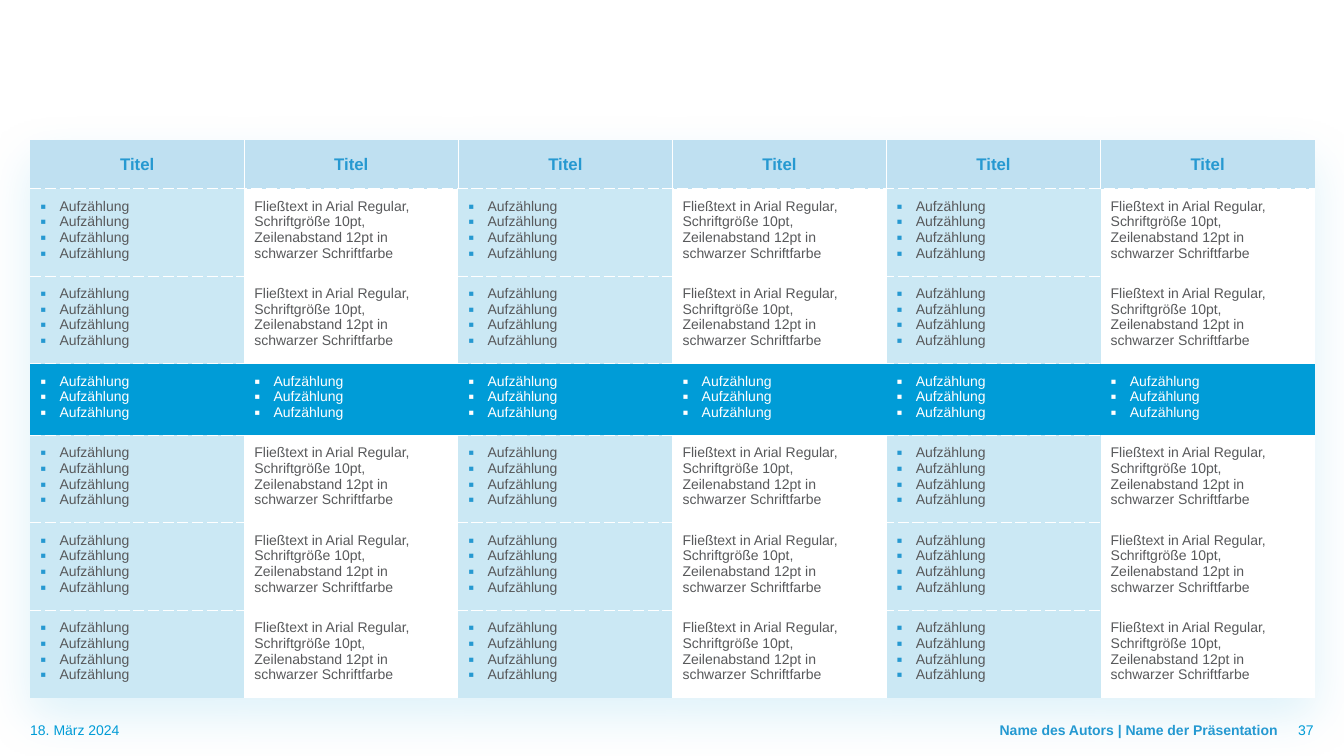
import lxml.etree
import pptx
import pptx.dml.color
import pptx.enum.text
import pptx.oxml
import pptx.oxml.ns
import pptx.util

Inches = pptx.util.Inches
Pt = pptx.util.Pt
RGBColor = pptx.dml.color.RGBColor
ALIGN = pptx.enum.text.PP_ALIGN
ANCHOR = pptx.enum.text.MSO_ANCHOR
qn = pptx.oxml.ns.qn

WHITE = RGBColor(0xFF, 0xFF, 0xFF)
CYAN = RGBColor(0x00, 0x9C, 0xD7)
BLUE = RGBColor(0x26, 0x99, 0xD1)
PALE = RGBColor(0xBF, 0xE0, 0xF1)
TINT = RGBColor(0xCB, 0xE8, 0xF4)
GREY = RGBColor(0x58, 0x59, 0x5B)

FONT = "Arial"
COLS, ROWS = 6, 7
HEAD, BAND = 0, 3
HEAD_H, BAND_H = 0.48, 0.71
ITEM = "Aufzählung"
PROSE = ("Fließtext in Arial Regular, Schriftgröße 10pt, "
         "Zeilenabstand 12pt in schwarzer Schriftfarbe")
NO_GRID = "{2D5ABB26-0587-4C30-8999-92F81FD0307C}"


def add_node(parent, tag, **attrs):
    node = lxml.etree.SubElement(parent, qn(tag))
    for key, value in attrs.items():
        node.set(key, str(value))
    return node


def style(para, size, color, bold=False):
    for run in para.runs:
        font = run.font
        font.name, font.size, font.bold = FONT, Pt(size), bold
        font.color.rgb = color


def add_bullet(para, color):
    props = para._p.get_or_add_pPr()
    props.set("marL", str(Inches(0.19)))
    props.set("indent", str(-Inches(0.19)))
    add_node(add_node(props, "a:buClr"), "a:srgbClr", val=color)
    add_node(props, "a:buSzPct", val=120000)
    add_node(props, "a:buFont", typeface=FONT)
    add_node(props, "a:buChar", char="▪")


def add_edge(cell, side, width, dash="solid"):
    """Draw one white border; a width of 0 hides it."""
    line = add_node(cell._tc.get_or_add_tcPr(), "a:ln" + side, w=Pt(width))
    if width:
        add_node(add_node(line, "a:solidFill"), "a:srgbClr", val=WHITE)
        add_node(line, "a:prstDash", val=dash)
    else:
        add_node(line, "a:noFill")


def add_edges(cell, row, col):
    """Solid lines between header cells, dashed lines between rows."""
    add_edge(cell, "L", 0.5 if row == HEAD and col > 0 else 0)
    add_edge(cell, "R", 0.5 if row == HEAD and col < COLS - 1 else 0)
    add_edge(cell, "T", 0.75 if row > HEAD else 0, "sysDash")
    add_edge(cell, "B", 0.75 if row < ROWS - 1 else 0, "sysDash")


def paint(cell, color, alpha=100):
    cell.fill.solid()
    cell.fill.fore_color.rgb = color
    if alpha < 100:
        tone = cell._tc.tcPr.find(".//" + qn("a:srgbClr"))
        add_node(tone, "a:alpha", val=alpha * 1000)


def fill_head(cell):
    paint(cell, PALE)
    cell.vertical_anchor = ANCHOR.MIDDLE
    para = cell.text_frame.paragraphs[0]
    para.text = "Titel"
    para.alignment = ALIGN.CENTER
    style(para, 12, BLUE, True)


def fill_list(cell, count, color, mark):
    cell.text_frame.text = "\n".join([ITEM] * count)
    for para in cell.text_frame.paragraphs:
        add_bullet(para, mark)
        style(para, 10, color)


def fill_cell(cell, row, col):
    cell.margin_left = cell.margin_right = Inches(0.1)
    cell.margin_top = cell.margin_bottom = Inches(0.1)
    add_edges(cell, row, col)
    if row == HEAD:
        fill_head(cell)
    elif row == BAND:
        paint(cell, CYAN)
        fill_list(cell, 3, WHITE, WHITE)
    elif col % 2 == 0:
        paint(cell, TINT, 50)
        fill_list(cell, 4, GREY, BLUE)
    else:
        paint(cell, WHITE)
        cell.text_frame.text = PROSE
        style(cell.text_frame.paragraphs[0], 10, GREY)


def add_glow(props):
    """Give the table a soft blue shadow below it."""
    effects = pptx.oxml.parse_xml(
        '<a:effectLst xmlns:a="http://schemas.openxmlformats.org/drawingml/2006/main"/>')
    glow = add_node(effects, "a:outerShdw", blurRad=Inches(0.5),
                    dist=Inches(0.2), dir=5400000, rotWithShape=0)
    add_node(add_node(glow, "a:srgbClr", val=CYAN), "a:alpha", val=12000)
    props.insert(0, effects)


def add_grid(slide, left, top, width, height):
    frame = slide.shapes.add_table(ROWS, COLS, Inches(left), Inches(top),
                                   Inches(width), Inches(height))
    table = frame.table
    table.first_row = table.horz_banding = False
    props = table._tbl.tblPr
    props.find(qn("a:tableStyleId")).text = NO_GRID
    add_glow(props)
    body = (height - HEAD_H - BAND_H) / (ROWS - 2)
    special = {HEAD: HEAD_H, BAND: BAND_H}
    for col in table.columns:
        col.width = Inches(width / COLS)
    for r, row in enumerate(table.rows):
        row.height = Inches(special.get(r, body))
        for c, cell in enumerate(row.cells):
            fill_cell(cell, r, c)


def add_label(slide, text, left, top, width, height, align, color,
              bold=False, inset=(0, 0)):
    box = slide.shapes.add_textbox(Inches(left), Inches(top),
                                   Inches(width), Inches(height))
    frame = box.text_frame
    frame.word_wrap = True
    frame.vertical_anchor = ANCHOR.BOTTOM
    frame.margin_left, frame.margin_right = map(Inches, inset)
    frame.margin_top, frame.margin_bottom = 0, Inches(0.16)
    frame.text = text
    para = frame.paragraphs[0]
    para.alignment = align
    style(para, 10, color, bold)


def add_foot(slide, left, top, width, height):
    edge = left + width
    add_label(slide, "18. März 2024", left, top, 4.08, height,
              ALIGN.LEFT, CYAN, inset=(0.3, 0))
    add_label(slide, "Name des Autors | Name der Präsentation", edge - 5.16,
              top, 4.5, height, ALIGN.RIGHT, BLUE, True)
    add_label(slide, "37", edge - 0.66, top, 0.66, height,
              ALIGN.RIGHT, CYAN, inset=(0, 0.3))


def main():
    deck = pptx.Presentation()
    deck.slide_width, deck.slide_height = Inches(13.33), Inches(7.5)
    slide = deck.slides.add_slide(deck.slide_layouts[6])
    add_foot(slide, 0, 7.17, 13.33, 0.31)
    add_grid(slide, 0.3, 1.39, 12.74, 5.52)
    deck.save("out.pptx")


if __name__ == "__main__":
    main()
